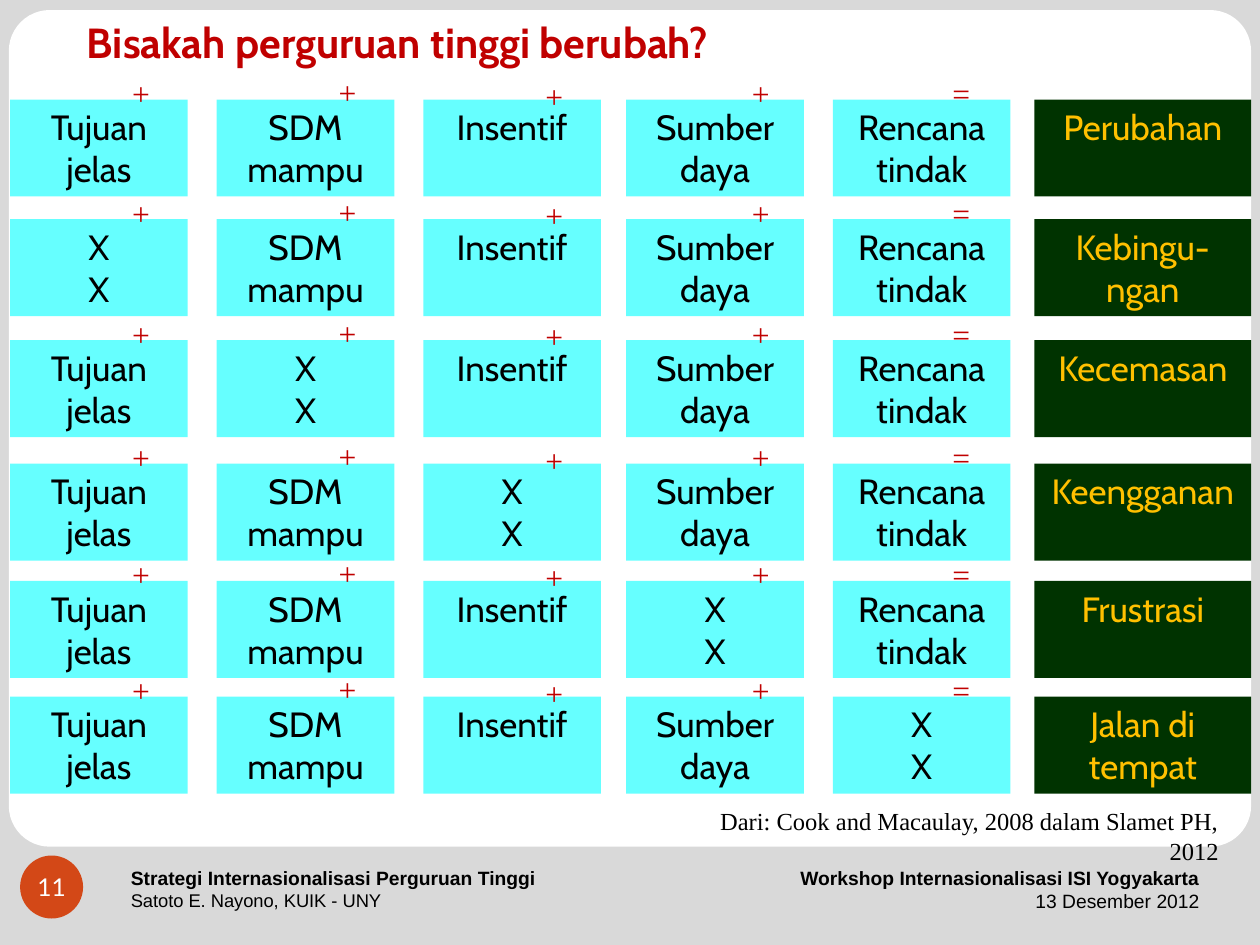
from pptx import Presentation
from pptx.dml.color import RGBColor
from pptx.enum.shapes import MSO_SHAPE
from pptx.enum.text import MSO_ANCHOR, PP_ALIGN
from pptx.util import Inches, Pt

COLS, ROWS = 100, 75
UNIT = Inches(10) // COLS
HUES = {"back": "D9D9D9", "page": "FFFFFF", "badge": "D34817", "title": "C00000",
        "cell": "66FFFF", "result": "003300", "gold": "FFC000", "ink": "000000"}
PARTS = ["Tujuan jelas", "SDM mampu", "Insentif", "Sumber daya", "Rencana tindak"]
ENDS = ["Perubahan", "Kebingu-ngan", "Kecemasan", "Keengganan", "Frustrasi",
        "Jalan di tempat"]
TOPS = [7.9, 17.4, 27, 36.8, 46.1, 55.3]
LEFTS = [0, 16.4, 32.8, 48.9, 65.3]
SIGNS = [("+", 8.7, 0), ("+", 25.1, -0.1), ("+", 41.5, 0.2), ("+", 57.9, 0),
         ("=", 73.8, 0)]


def hue(name):
    return RGBColor.from_string(HUES[name])


def grid(box):
    """Turn columns and rows of the slide grid into lengths."""
    return [round(part * UNIT) for part in box]


def write(shape, lines, size, face, color, align=PP_ALIGN.LEFT,
          anchor=MSO_ANCHOR.TOP, bold=False):
    frame = shape.text_frame
    frame.word_wrap = True
    frame.vertical_anchor = anchor
    frame.text = "\n".join(lines)
    for para in frame.paragraphs:
        para.alignment = align
        font = para.font
        font.size, font.name, font.bold = Pt(size), face, bold
        font.color.rgb = hue(color)


def block(shapes, kind, box, fill):
    shape = shapes.add_shape(kind, *grid(box))
    shape.shadow.inherit = False
    shape.fill.solid()
    shape.fill.fore_color.rgb = hue(fill)
    shape.line.fill.background()
    return shape


def label(shapes, box, lines, *style, **more):
    shape = shapes.add_textbox(*grid(box))
    write(shape, lines, *style, **more)
    return shape


def frame_page(shapes, box):
    left, top, wide, high = box
    block(shapes, MSO_SHAPE.RECTANGLE, box, "back")
    page = block(shapes, MSO_SHAPE.ROUNDED_RECTANGLE,
                 (left + 0.7, top + 0.8, wide - 1.4, high - 8.6), "page")
    page.adjustments[0] = 0.049


def footer(shapes, box):
    left, top, wide, high = box
    badge = block(shapes, MSO_SHAPE.OVAL, (left, top, high, high), "badge")
    write(badge, ["11"], 14, "Lato", "page", PP_ALIGN.CENTER, MSO_ANCHOR.MIDDLE)
    text = badge.text_frame
    text.margin_left = text.margin_right = text.margin_top = text.margin_bottom = 0
    text.word_wrap = False
    notes = [
        (7.8, 43.3, 10.5, PP_ALIGN.LEFT,
         ["Strategi Internasionalisasi Perguruan Tinggi", "Satoto E. Nayono, KUIK - UNY"]),
        (60.9, 33.7, 11, PP_ALIGN.RIGHT,
         ["Workshop Internasionalisasi ISI Yogyakarta", "13 Desember 2012"])]
    for shift, span, size, align, lines in notes:
        note = label(shapes, (left + shift, top + 0.1, span, high + 0.1), lines, size,
                     "Arial", "ink", align, MSO_ANCHOR.MIDDLE)
        head = note.text_frame.paragraphs[0].font
        head.bold, head.size = True, Pt(11)


def heading(slide, box):
    title = slide.shapes.title
    # Bring the title in front of the page frame
    slide.shapes.element.append(title.element)
    title.left, title.top, title.width, title.height = grid(box)
    write(title, ["Bisakah perguruan tinggi berubah?"], 24, "Cabin", "title",
          anchor=MSO_ANCHOR.BOTTOM, bold=True)
    title.text_frame.margin_bottom = UNIT


def chain(shapes, box, gap, end):
    """One row: five parts, the one at index gap missing, and their result."""
    left, top, wide, high = box
    group = shapes.add_group_shape().shapes
    span = 17.2
    cells = [(shift, 14.1, ["X", "X"] if spot == gap else [part], "cell", "ink")
             for spot, (shift, part) in enumerate(zip(LEFTS, PARTS))]
    cells.append((wide - span, span, [end], "result", "gold"))
    for shift, size, lines, fill, color in cells:
        cell = block(group, MSO_SHAPE.RECTANGLE, (left + shift, top, size, high), fill)
        write(cell, lines, 20, "Cabin", color, PP_ALIGN.CENTER)
    for sign, shift, drop in SIGNS:
        label(group, (left + shift, top - 2.5 + drop, 4.7, 4), [sign], 18,
              "Times New Roman", "title")


def main():
    deck = Presentation()
    deck.slide_width, deck.slide_height = grid((COLS, ROWS))
    slide = deck.slides.add_slide(deck.slide_layouts[5])
    shapes = slide.shapes
    frame_page(shapes, (0, 0, COLS, ROWS))
    footer(shapes, (1.6, 67.9, 95, 5))
    heading(slide, (5.9, -1.6, 85, 7.9))
    for index, (top, end) in enumerate(zip(TOPS, ENDS)):
        chain(shapes, (0.8, top, 98.5, 7.7), index - 1, end)
    label(shapes, (55.5, 63.5, 42.2, 3.4),
          ["Dari: Cook and Macaulay, 2008 dalam Slamet PH, 2012"], 14,
          "Times New Roman", "ink", PP_ALIGN.RIGHT)
    deck.save("out.pptx")


if __name__ == "__main__":
    main()
